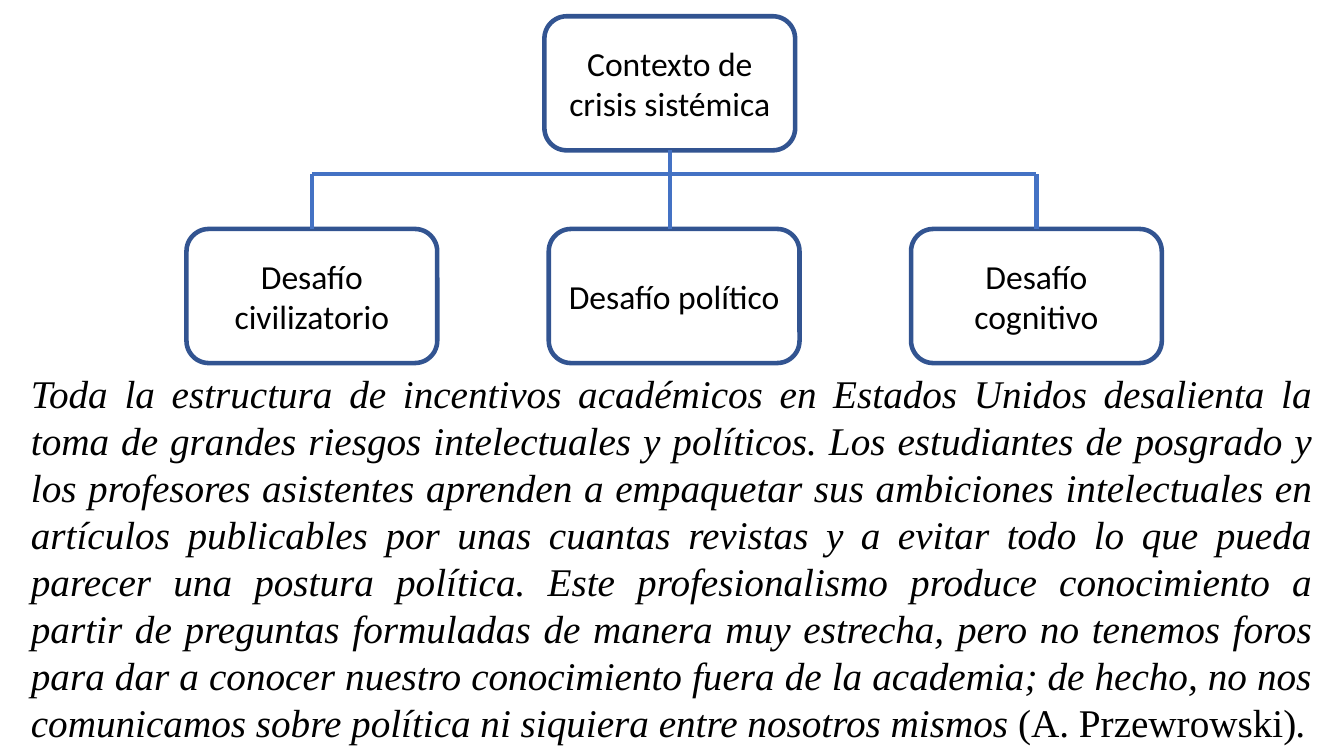
from lxml.etree import SubElement
from pptx import Presentation
from pptx.dml.color import RGBColor
from pptx.enum.shapes import MSO_CONNECTOR, MSO_SHAPE
from pptx.enum.text import MSO_ANCHOR, PP_ALIGN
from pptx.oxml.ns import qn
from pptx.util import Cm, Pt

COLORS = {"border": "325491", "connector": "4472C4", "text": "000000"}
BOX_WIDTH, BOX_HEIGHT = 6.32, 3.38
ROOT_LEFT, ROOT_TOP = 13.72, 0.41
CHALLENGE_LEFT, CHALLENGE_TOP, CHALLENGE_STEP = 4.7, 5.77, 9.13
BRANCH_TOP = 4.39


def add_text(paragraph, text, font="Calibri", size=24, italic=False,
             align=PP_ALIGN.CENTER):
    paragraph.alignment = align
    run = paragraph.add_run()
    run.text = text
    run.font.name = font
    run.font.size = Pt(size)
    run.font.italic = italic
    run.font.color.rgb = RGBColor.from_string(COLORS["text"])


presentation = Presentation()
presentation.slide_width = Cm(33.87)
presentation.slide_height = Cm(19.05)
slide = presentation.slides.add_slide(presentation.slide_layouts[6])

# Boxes: the context above its three challenges
boxes = [("Contexto de crisis sistémica", ROOT_LEFT, ROOT_TOP)]
challenges = ["Desafío civilizatorio", "Desafío político", "Desafío cognitivo"]
for index, challenge in enumerate(challenges):
    left = CHALLENGE_LEFT + index * CHALLENGE_STEP
    boxes.append((challenge, left, CHALLENGE_TOP))

for label, left, top in boxes:
    shape = slide.shapes.add_shape(MSO_SHAPE.ROUNDED_RECTANGLE, Cm(left), Cm(top),
                                   Cm(BOX_WIDTH), Cm(BOX_HEIGHT))
    shape.shadow.inherit = False
    shape.fill.background()
    shape.line.color.rgb = RGBColor.from_string(COLORS["border"])
    shape.line.width = Pt(3.25)
    shape.text_frame.word_wrap = True
    shape.text_frame.vertical_anchor = MSO_ANCHOR.MIDDLE
    add_text(shape.text_frame.paragraphs[0], label)

# Connectors: trunk, crossbar and the two outer drops
center = ROOT_LEFT + BOX_WIDTH / 2
first = CHALLENGE_LEFT + BOX_WIDTH / 2
last = first + 2 * CHALLENGE_STEP
lines = [
    (center, ROOT_TOP + BOX_HEIGHT, center, CHALLENGE_TOP),
    (first, BRANCH_TOP, last, BRANCH_TOP),
    (last, BRANCH_TOP, last, CHALLENGE_TOP),
    (first, BRANCH_TOP, first, CHALLENGE_TOP),
]
for ends in lines:
    connector = slide.shapes.add_connector(MSO_CONNECTOR.STRAIGHT,
                                           *[Cm(value) for value in ends])
    connector.line.color.rgb = RGBColor.from_string(COLORS["connector"])
    connector.line.width = Pt(3)
    SubElement(connector._element.spPr, qn("a:effectLst"))

# Quotation
quotation = slide.shapes.add_textbox(Cm(0.53), Cm(9.17), Cm(32.79), Cm(9.83))
quotation.text_frame.word_wrap = True
quotation_runs = [
    ("Toda la estructura de incentivos académicos en Estados Unidos desalienta la "
     "toma de grandes riesgos intelectuales y políticos. Los estudiantes de posgrado "
     "y los profesores asistentes aprenden a empaquetar sus ambiciones intelectuales "
     "en artículos publicables por unas cuantas revistas y a evitar todo lo que pueda "
     "parecer una postura política. Este profesionalismo produce conocimiento a "
     "partir de preguntas formuladas de manera muy estrecha, pero no tenemos foros "
     "para dar a conocer nuestro conocimiento fuera de la academia; de hecho, no nos "
     "comunicamos sobre política ni siquiera entre nosotros mismos ", True),
    ("(A. Przewrowski)", False),
    (".", True),
]
for text, italic in quotation_runs:
    add_text(quotation.text_frame.paragraphs[0], text, font="Times New Roman",
             size=28, italic=italic, align=PP_ALIGN.JUSTIFY)

presentation.save("out.pptx")
